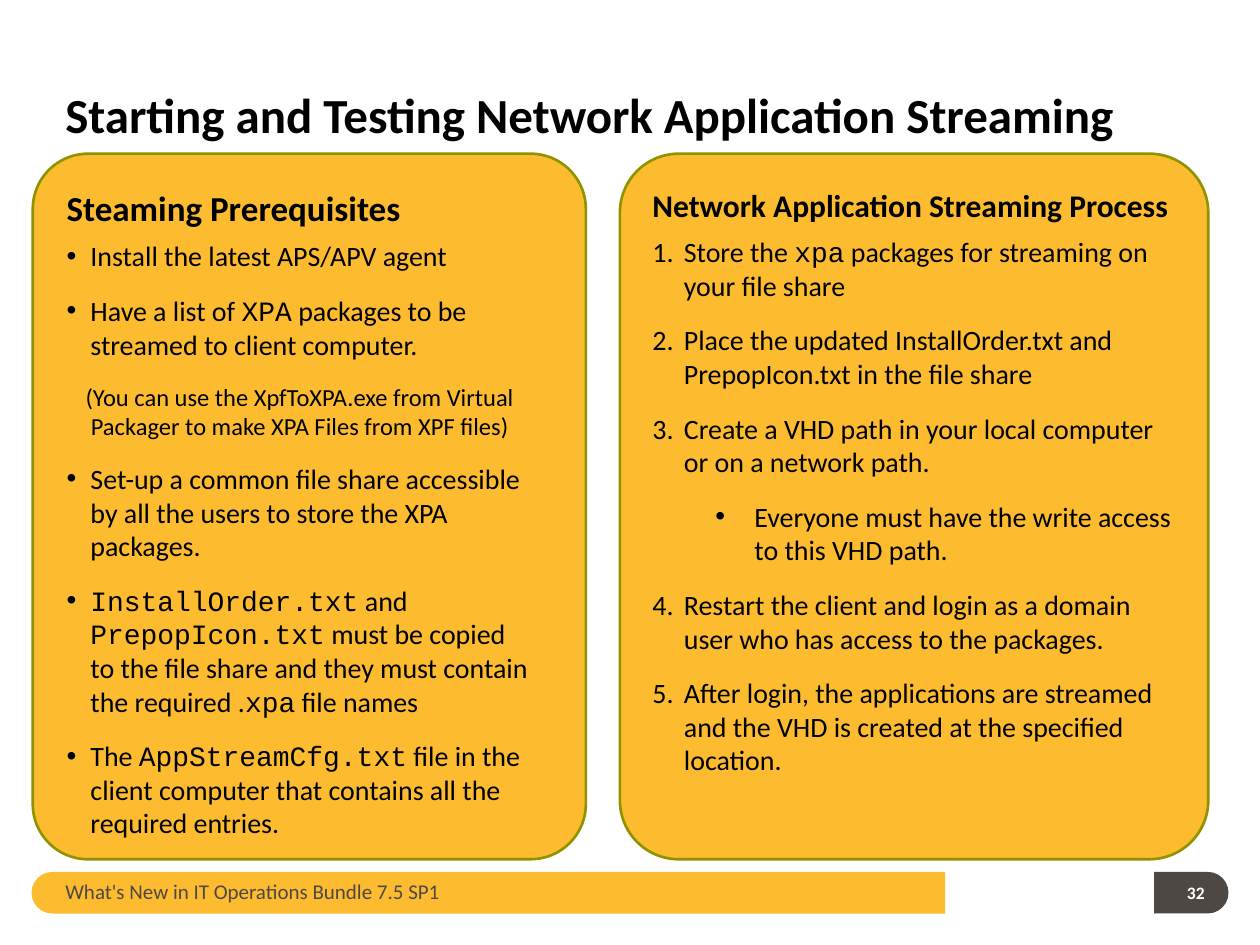
from pptx import Presentation
from pptx.dml.color import RGBColor
from pptx.enum.shapes import MSO_SHAPE as Shape
from pptx.enum.text import MSO_ANCHOR as Anchor, PP_ALIGN as Align
from pptx.oxml.xmlchemy import OxmlElement
from pptx.util import Inches, Pt

# Content: a paragraph is (style, runs); a run in CODE style is ("code", text)
TITLE = "Starting and Testing Network Application Streaming"
FOOTER = "What's New in IT Operations Bundle 7.5 SP1"
PAGE_NUMBER = "32"


def code(text):
    return "code", text


PREREQUISITES = [
    ("heading", ["Steaming Prerequisites"]),
    ("bullet", ["Install the latest APS/APV agent"]),
    ("bullet", ["Have a list of ", code("XPA"),
                " packages to be streamed to client computer."]),
    ("note", ["(You can use the XpfToXPA.exe from Virtual Packager "
              "to make XPA Files from XPF files)"]),
    ("bullet", ["Set-up a common file share accessible by all the users "
                "to store the XPA packages."]),
    ("bullet", [code("InstallOrder.txt"), " and ", code("PrepopIcon.txt"),
                " must be copied to the file share and they must contain "
                "the required .", code("xpa"), " file names"]),
    ("bullet", ["The ", code("AppStreamCfg.txt"),
                " file in the client computer that contains all the "
                "required entries."]),
]
PROCESS = [
    ("subheading", ["Network Application Streaming Process"]),
    ("step", ["Store the ", code("xpa"),
              " packages for streaming on your file share"]),
    ("step", ["Place the updated InstallOrder.txt and PrepopIcon.txt "
              "in the file share"]),
    ("step", ["Create a VHD path in your local computer or on a network path."]),
    ("substep", ["Everyone must have the write access to this VHD path."]),
    ("step", ["Restart the client and login as a domain user who has access "
              "to the packages."]),
    ("step", ["After login, the applications are streamed and the VHD is "
              "created at the specified location."]),
]

THEME = {
    "font": "Calibri", "code": "Courier New", "mark": "Arial",
    "panel": RGBColor(0xFD, 0xBB, 0x30), "edge": RGBColor(0x8E, 0x93, 0x00),
    "ink": RGBColor(0, 0, 0), "dark": RGBColor(0x4E, 0x48, 0x45),
    "white": RGBColor(0xFF, 0xFF, 0xFF),
    "title": 28, "heading": 20, "subheading": 18, "bullet": 16, "step": 16,
    "substep": 16, "note": 14, "footer": 12, "page": 10,
}
# Style: (left margin, hanging indent, mark elements with their attributes)
DOT = [("a:buFont", {"typeface": THEME["mark"]}), ("a:buChar", {"char": "•"})]
NUMBER = [("a:buAutoNum", {"type": "arabicPeriod"})]
LISTS = {
    "bullet": (0.19, 0.19, DOT),
    "step": (0.25, 0.25, NUMBER),
    "substep": (0.81, 0.31, DOT),
}
BOLD = ("title", "heading", "subheading", "page")
CENTERED = ("note", "page")

# Panels: (panel left, panel width, text box, paragraphs)
PANEL_TOP, PANEL_HEIGHT = 1.22, 5.6
PANELS = [
    (0.26, 4.39, (0.43, 1.43, 3.9, 5.26), PREREQUISITES),
    (4.92, 4.67, (5.08, 1.43, 4.4, 5.19), PROCESS),
]
# Footer bars: (box before rotation, rotation, colour)
BARS = [
    ((3.71, 3.46, 0.33, 7.25), 270, "panel"),
    ((9.29, 6.79, 0.33, 0.59), 90, "dark"),
]


def add_panel(slide, kind, box, fill, adjustments):
    panel = slide.shapes.add_shape(kind, *map(Inches, box))
    panel.shadow.inherit = False
    panel.fill.solid()
    panel.fill.fore_color.rgb = THEME[fill]
    panel.line.fill.background()
    for i, value in enumerate(adjustments):
        panel.adjustments[i] = value
    return panel


def add_list_mark(paragraph, style):
    margin, hanging, marks = LISTS[style]
    props = paragraph._p.get_or_add_pPr()
    props.set("marL", str(Inches(margin)))
    props.set("indent", str(-Inches(hanging)))
    for tag, attributes in marks:
        mark = OxmlElement(tag)
        for name, value in attributes.items():
            mark.set(name, value)
        props.append(mark)


def add_text(slide, box, paragraphs, color="ink", anchor=Anchor.TOP,
             side=0.1, edge=0.05):
    frame = slide.shapes.add_textbox(*map(Inches, box)).text_frame
    frame.word_wrap = True
    frame.vertical_anchor = anchor
    frame.margin_left = frame.margin_right = Inches(side)
    frame.margin_top = frame.margin_bottom = Inches(edge)
    for i, (style, runs) in enumerate(paragraphs):
        paragraph = frame.add_paragraph() if i else frame.paragraphs[0]
        if style in LISTS:
            add_list_mark(paragraph, style)
        if style == "substep":
            paragraph.level = 1
        if style in CENTERED:
            paragraph.alignment = Align.CENTER
        if i:
            paragraph.space_before = paragraph.space_after = Pt(6)
        for part in runs:
            face, words = ("font", part) if isinstance(part, str) else part
            run = paragraph.add_run()
            run.text = words
            run.font.name = THEME[face]
            run.font.size = Pt(THEME[style])
            run.font.bold = style in BOLD
            run.font.color.rgb = THEME[color]
    return frame


def main():
    deck = Presentation()
    deck.slide_width, deck.slide_height = Inches(10), Inches(7.5)
    slide = deck.slides.add_slide(deck.slide_layouts[6])

    # Footer bars
    for box, rotation, fill in BARS:
        bar = add_panel(slide, Shape.ROUND_2_SAME_RECTANGLE, box, fill, (0.5, 0))
        bar.rotation = rotation

    # Title
    title = add_text(slide, (0.42, 0.27, 9.17, 0.92), [("title", [TITLE])],
                     anchor=Anchor.BOTTOM)
    title.paragraphs[0].line_spacing = 0.9

    # Panels, then their text
    for left, width, _, _ in PANELS:
        panel = add_panel(slide, Shape.ROUNDED_RECTANGLE,
                          (left, PANEL_TOP, width, PANEL_HEIGHT), "panel", (0.1,))
        panel.line.color.rgb = THEME["edge"]
        panel.line.width = Pt(1.5)
    for _, _, text_box, paragraphs in PANELS:
        add_text(slide, text_box, paragraphs)

    # Footer text and page number
    add_text(slide, (0.42, 6.95, 4.58, 0.25), [("footer", [FOOTER])],
             "dark", Anchor.MIDDLE, edge=0)
    add_text(slide, (9.35, 7, 0.28, 0.17), [("page", [PAGE_NUMBER])],
             "white", Anchor.MIDDLE, side=0, edge=0)

    deck.save("out.pptx")


if __name__ == "__main__":
    main()
